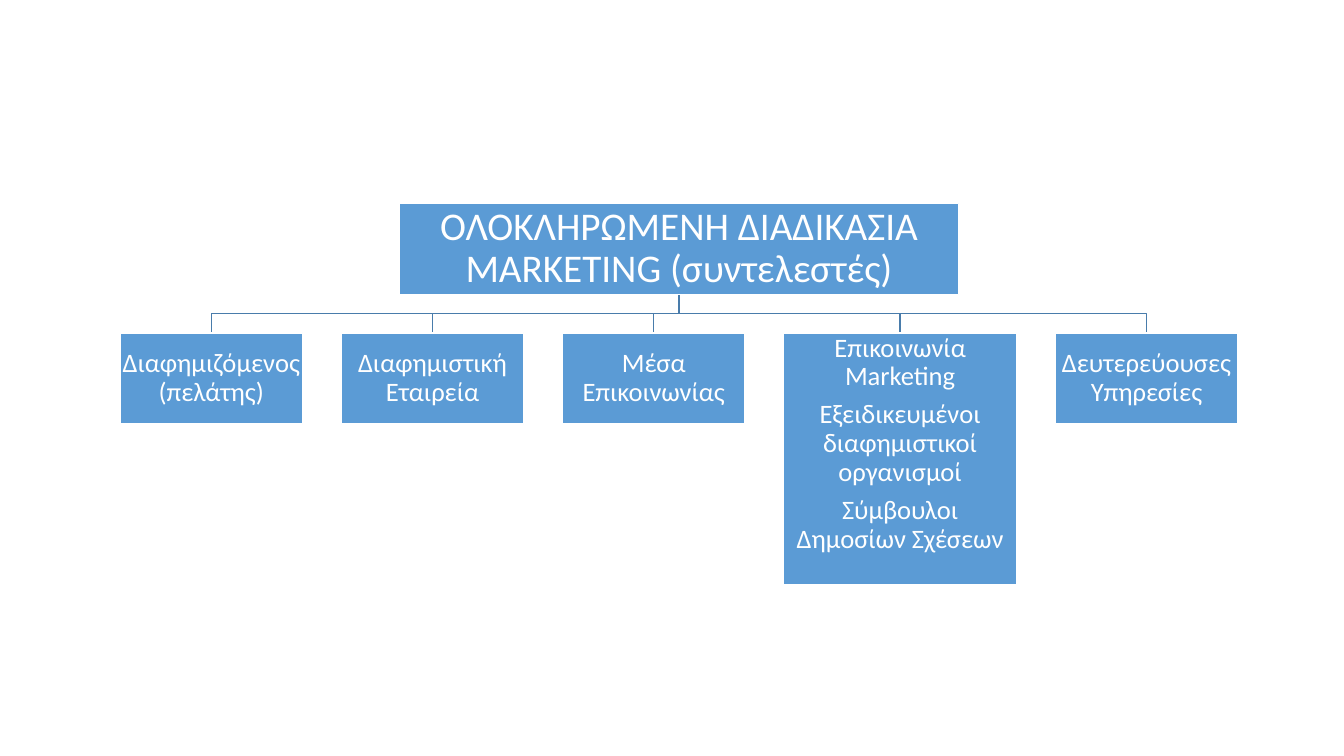
from pptx import Presentation
from pptx.dml.color import RGBColor
from pptx.enum.shapes import MSO_SHAPE
from pptx.enum.text import MSO_ANCHOR, PP_ALIGN
from pptx.util import Pt

RECTANGLE = MSO_SHAPE.RECTANGLE
TOP, MIDDLE = MSO_ANCHOR.TOP, MSO_ANCHOR.MIDDLE
CENTER = PP_ALIGN.CENTER

FONT = "Calibri"
BOX_FILL, WHITE, CONNECTOR = "5B9BD5", "FFFFFF", "497CAB"
ROOT_TEXT = "ΟΛΟΚΛΗΡΩΜΕΝΗ ΔΙΑΔΙΚΑΣΙΑ MARKETING (συντελεστές)"
ROOT_WIDTH, BOX_HEIGHT = 399.6, 65.2
LEVEL_GAP, BRANCH_GAP = 27.4, 27.7
NARROW, WIDE, TALL = 130.3, 166.3, 180
# Text, width, height, anchor
BRANCHES = [
    ("Διαφημιζόμενος (πελάτης)", NARROW, BOX_HEIGHT, MIDDLE),
    ("Διαφημιστική Εταιρεία", NARROW, BOX_HEIGHT, MIDDLE),
    ("Μέσα Επικοινωνίας", NARROW, BOX_HEIGHT, MIDDLE),
    ("Επικοινωνία Marketing\nΕξειδικευμένοι διαφημιστικοί οργανισμοί\n"
     "Σύμβουλοι Δημοσίων Σχέσεων", WIDE, TALL, TOP),
    ("Δευτερεύουσες Υπηρεσίες", NARROW, BOX_HEIGHT, MIDDLE),
]


def color(hex_string):
    return RGBColor.from_string(hex_string)


def add_box(slide, left, top, width, height, text, size, inset, anchor=MIDDLE):
    box = slide.shapes.add_shape(RECTANGLE, Pt(left), Pt(top), Pt(width), Pt(height))
    box.shadow.inherit = False
    box.fill.solid()
    box.fill.fore_color.rgb = color(BOX_FILL)
    box.line.color.rgb = color(WHITE)
    box.line.width = Pt(1)
    frame = box.text_frame
    frame.word_wrap = True
    frame.vertical_anchor = anchor
    frame.margin_left = frame.margin_right = Pt(inset)
    frame.margin_top = frame.margin_bottom = Pt(inset)
    frame.text = text
    for paragraph in frame.paragraphs:
        paragraph.alignment = CENTER
        paragraph.line_spacing = 0.9
        paragraph.space_after = Pt(0.35 * size)
        paragraph.font.name = FONT
        paragraph.font.size = Pt(size)
        paragraph.font.color.rgb = color(WHITE)


def add_elbow(slide, start_x, start_y, end_x, end_y):
    """Draw a line down, across halfway, and down again."""
    middle_y = (start_y + end_y) / 2
    builder = slide.shapes.build_freeform(Pt(start_x), Pt(start_y))
    corners = [(start_x, middle_y), (end_x, middle_y), (end_x, end_y)]
    builder.add_line_segments([(Pt(x), Pt(y)) for x, y in corners], close=False)
    elbow = builder.convert_to_shape()
    elbow.shadow.inherit = False
    elbow.fill.background()
    elbow.line.color.rgb = color(CONNECTOR)
    elbow.line.width = Pt(1)


def add_hierarchy(slide, left, top):
    """Place the root box centred above its row of branches."""
    total_width = sum(branch[1] for branch in BRANCHES) + BRANCH_GAP * (len(BRANCHES) - 1)
    center_x = left + total_width / 2
    root_bottom = top + BOX_HEIGHT
    branch_top = root_bottom + LEVEL_GAP

    branch_lefts = []
    for _, width, _, _ in BRANCHES:
        branch_lefts.append(left)
        add_elbow(slide, center_x, root_bottom, left + width / 2, branch_top)
        left += width + BRANCH_GAP

    add_box(slide, center_x - ROOT_WIDTH / 2, top, ROOT_WIDTH, BOX_HEIGHT,
            ROOT_TEXT, size=28, inset=1.4)
    for branch_left, (text, width, height, anchor) in zip(branch_lefts, BRANCHES):
        add_box(slide, branch_left, branch_top, width, height,
                text, size=19, inset=0.95, anchor=anchor)


def main():
    presentation = Presentation()
    presentation.slide_width = Pt(960)
    presentation.slide_height = Pt(540)
    slide = presentation.slides.add_slide(presentation.slide_layouts[6])
    add_hierarchy(slide, left=85.8, top=145.2)
    presentation.save("out.pptx")


if __name__ == "__main__":
    main()
